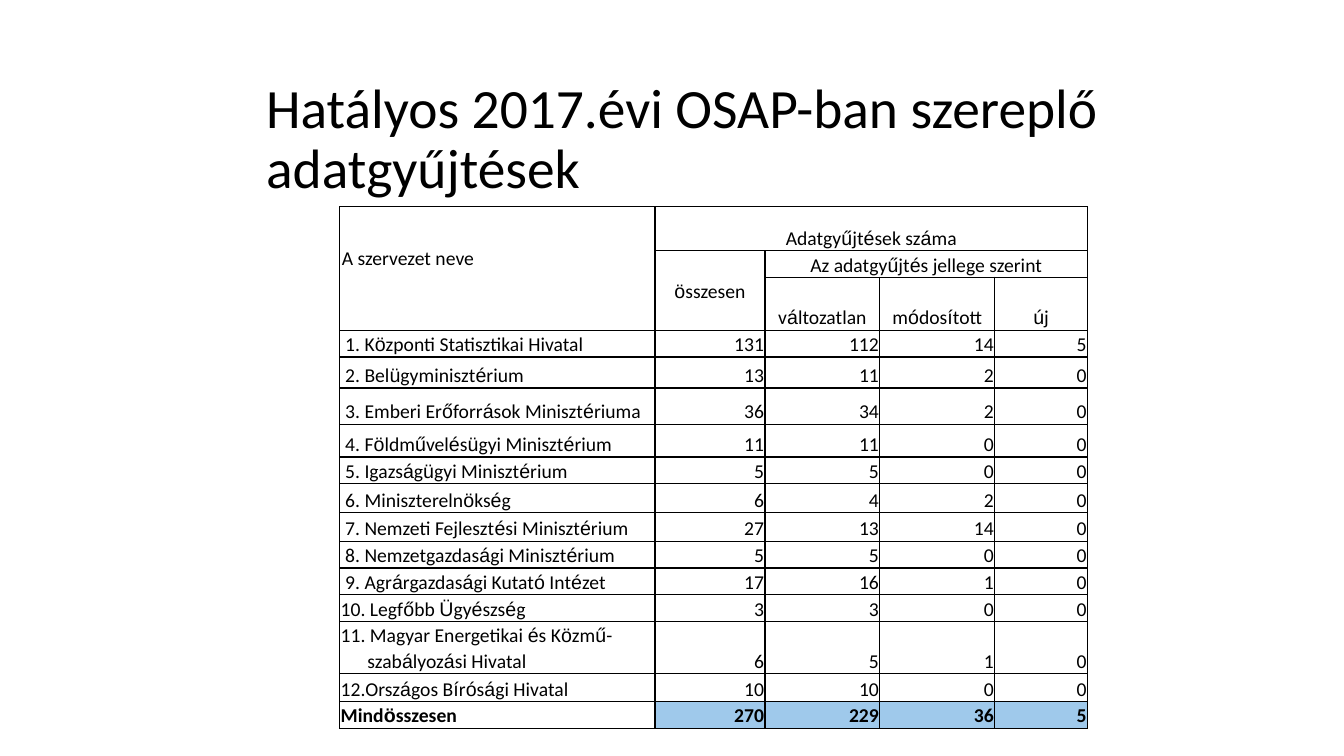
from itertools import groupby

from lxml import etree
from pptx import Presentation
from pptx.dml.color import RGBColor
from pptx.enum.text import MSO_ANCHOR, MSO_AUTO_SIZE, PP_ALIGN
from pptx.oxml.ns import qn
from pptx.util import Pt

LEFT, CENTER, RIGHT = PP_ALIGN.LEFT, PP_ALIGN.CENTER, PP_ALIGN.RIGHT
MIDDLE, BOTTOM = MSO_ANCHOR.MIDDLE, MSO_ANCHOR.BOTTOM
NO_AUTOFIT = MSO_AUTO_SIZE.NONE

# Column widths and row heights in points
COLUMNS = [225.2, 78.5, 82.1, 82.1, 66.2]
HEADER_ROWS = [31.5, 18.5, 37.8]
BODY_ROWS = [19.2, 22.2, 25.8, 23.4, 19.2, 20.4, 20.6, 19.2, 19, 19.2, 37.3, 20, 18.5]

# (row, column, rows spanned, columns spanned, text, format)
HEADERS = [
    (0, 0, 3, 1, "A szervezet neve",
     dict(align=LEFT, anchor=MIDDLE, margin_left=Pt(1.5), margin_bottom=Pt(16))),
    (0, 1, 1, 4, "Adatgyűjtések száma", {}),
    (1, 1, 2, 1, "összesen", dict(anchor=MIDDLE)),
    (1, 2, 1, 3, "Az adatgyűjtés jellege szerint", {}),
    (2, 2, 1, 1, "változatlan", {}),
    (2, 3, 1, 1, "módosított", {}),
    (2, 4, 1, 1, "új", {}),
]

# (organisation, total, unchanged, modified, new)
SURVEYS = [
    ("1. Központi Statisztikai Hivatal", 131, 112, 14, 5),
    ("2. Belügyminisztérium", 13, 11, 2, 0),
    ("3. Emberi Erőforrások Minisztériuma", 36, 34, 2, 0),
    ("4. Földművelésügyi Minisztérium", 11, 11, 0, 0),
    ("5. Igazságügyi Minisztérium", 5, 5, 0, 0),
    ("6. Miniszterelnökség", 6, 4, 2, 0),
    ("7. Nemzeti Fejlesztési Minisztérium", 27, 13, 14, 0),
    ("8. Nemzetgazdasági Minisztérium", 5, 5, 0, 0),
    ("9. Agrárgazdasági Kutató Intézet", 17, 16, 1, 0),
    ("10. Legfőbb Ügyészség", 3, 3, 0, 0),
    ("11. Magyar Energetikai és Közmű-\nszabályozási Hivatal", 6, 5, 1, 0),
    ("12.Országos Bírósági Hivatal", 10, 10, 0, 0),
    ("Mindösszesen", 270, 229, 36, 5),
]


def rgb(value):
    return RGBColor.from_string(value)


class SlideBuilder:
    font, accent_font = "Calibri", "Arial"
    ink, total_fill = "000000", "9FC9EB"

    def __init__(self, slide):
        self.slide = slide

    def run(self, p, text, size, font, bold=False):
        r = p.add_run()
        r.text = text
        for name, value in dict(name=font, size=Pt(size), bold=bold).items():
            setattr(r.font, name, value)
        r.font.color.rgb = rgb(self.ink)

    def title(self, text, left, top, width, height, size):
        sp = self.slide.shapes.title
        for name, value in dict(left=left, top=top, width=width, height=height).items():
            setattr(sp, name, Pt(value))
        tf = sp.text_frame
        for name, value in dict(word_wrap=True, auto_size=NO_AUTOFIT,
                                vertical_anchor=MIDDLE).items():
            setattr(tf, name, value)
        p = tf.paragraphs[0]
        p.alignment, p.line_spacing = LEFT, 0.9
        self.run(p, text, size, self.font)

    def table(self, left, top, columns, rows):
        frame = self.slide.shapes.add_table(len(rows), len(columns), Pt(left), Pt(top),
                                            Pt(sum(columns)), Pt(sum(rows)))
        tbl = frame.table
        tbl.first_row = tbl.horz_banding = False
        for column, width in zip(tbl.columns, columns):
            column.width = Pt(width)
        for row, height in zip(tbl.rows, rows):
            row.height = Pt(height)
            for cell in row.cells:
                cell.fill.background()
                self.borders(cell)
        return tbl

    def borders(self, cell):
        tcPr = cell._tc.get_or_add_tcPr()
        for i, side in enumerate(("a:lnL", "a:lnR", "a:lnT", "a:lnB")):
            ln = etree.Element(qn(side), w=str(Pt(1)))
            fill = etree.SubElement(ln, qn("a:solidFill"))
            etree.SubElement(fill, qn("a:srgbClr"), val=self.ink)
            tcPr.insert(i, ln)

    def cell(self, cell, text, align=LEFT, bold=False, fill=None, indents=(0, 0), **fmt):
        base = dict(margin_left=Pt(0.7), margin_right=Pt(0.7), margin_top=Pt(0.7),
                    margin_bottom=0, vertical_anchor=fmt.pop("anchor", BOTTOM))
        for name, value in {**base, **fmt}.items():
            setattr(cell, name, value)
        if fill:
            cell.fill.solid()
            cell.fill.fore_color.rgb = rgb(fill)
        tf = cell.text_frame
        for i, (line, indent) in enumerate(zip(text.split("\n"), indents)):
            p = tf.add_paragraph() if i else tf.paragraphs[0]
            p.alignment, p.line_spacing = align, 1.07
            if indent:
                p._p.get_or_add_pPr().set("marL", str(Pt(indent)))
            # Accented letters are set in the second font
            for plain, letters in groupby(line, str.isascii):
                self.run(p, "".join(letters), 14,
                         self.font if plain else self.accent_font, bold)


def main():
    prs = Presentation()
    prs.slide_width, prs.slide_height = Pt(960), Pt(540)
    s = SlideBuilder(prs.slides.add_slide(prs.slide_layouts[5]))

    # Title
    s.title("Hatályos 2017.évi OSAP-ban szereplő adatgyűjtések", 182.9, 67, 653, 66.2, 39.6)

    # Table header
    tbl = s.table(242.7, 147.6, COLUMNS, HEADER_ROWS + BODY_ROWS)
    for row, col, height, width, text, fmt in HEADERS:
        cell = tbl.cell(row, col)
        if height * width > 1:
            cell.merge(tbl.cell(row + height - 1, col + width - 1))
        s.cell(cell, text, **{"align": CENTER, **fmt})

    # Organisations and totals
    for row, (name, *counts) in enumerate(SURVEYS, len(HEADER_ROWS)):
        total = name == SURVEYS[-1][0]
        single_digit = name[1] == "."
        s.cell(tbl.cell(row, 0), name, bold=total, indents=(3.2 if single_digit else 0, 19))
        for col, count in enumerate(counts, 1):
            s.cell(tbl.cell(row, col), str(count), RIGHT, total,
                   s.total_fill if total else None)

    prs.save("out.pptx")


if __name__ == "__main__":
    main()
